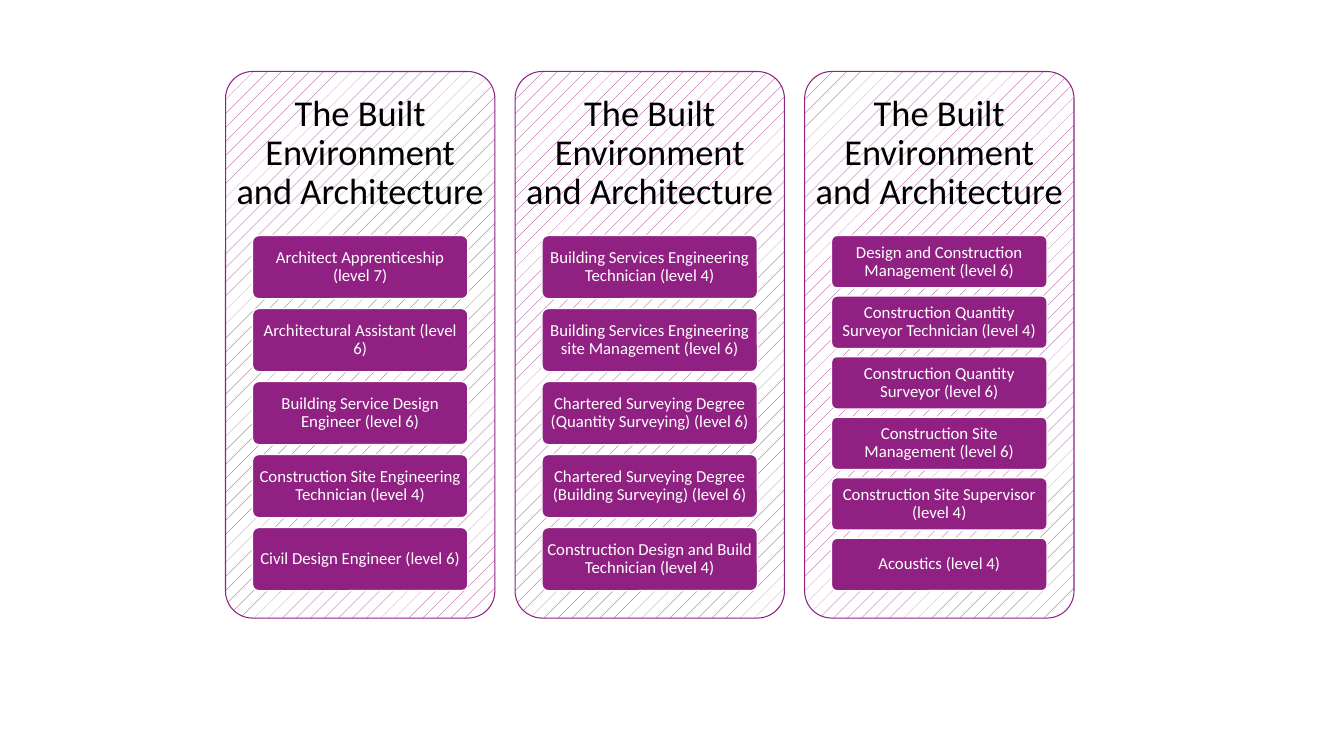
"""Builds a slide with three panels of built environment apprenticeships."""
from pptx import Presentation
from pptx.dml.color import RGBColor
from pptx.enum.dml import MSO_PATTERN
from pptx.enum.shapes import MSO_SHAPE
from pptx.enum.text import MSO_ANCHOR, PP_ALIGN
from pptx.util import Pt

ROUNDED = MSO_SHAPE.ROUNDED_RECTANGLE
DOTTED = MSO_PATTERN.PERCENT_5
MIDDLE = MSO_ANCHOR.MIDDLE
CENTER = PP_ALIGN.CENTER

COLORS = {"purple": "902182", "white": "FFFFFF", "black": "000000"}
HEADING = "The Built Environment and Architecture"
PANELS = [
    [
        "Architect Apprenticeship (level 7)",
        "Architectural Assistant (level 6)",
        "Building Service Design Engineer (level 6)",
        "Construction Site Engineering Technician (level 4)",
        "Civil Design Engineer (level 6)",
    ],
    [
        "Building Services Engineering Technician (level 4)",
        "Building Services Engineering site Management (level 6)",
        "Chartered Surveying Degree (Quantity Surveying) (level 6)",
        "Chartered Surveying Degree (Building Surveying) (level 6)",
        "Construction Design and Build Technician (level 4)",
    ],
    [
        "Design and Construction Management (level 6)",
        "Construction Quantity Surveyor Technician (level 4)",
        "Construction Quantity Surveyor (level 6)",
        "Construction Site Management (level 6)",
        "Construction Site Supervisor (level 4)",
        "Acoustics (level 4)",
    ],
]

PANEL_LEFT, PANEL_TOP = 161.1, 51.1
PANEL_WIDTH, PANEL_HEIGHT = 192.4, 390.4
PANEL_STEP = PANEL_WIDTH * 1.075
HEADING_HEIGHT = PANEL_HEIGHT * 0.3
COURSES_HEIGHT = PANEL_HEIGHT * 0.65
GAP_RATIO = 0.154


def color(name):
    return RGBColor.from_string(COLORS[name])


def write(box, text, *, size, ink, inset_x, inset_y):
    frame = box.text_frame
    frame.word_wrap = True
    frame.vertical_anchor = MIDDLE
    frame.margin_left = frame.margin_right = Pt(inset_x)
    frame.margin_top = frame.margin_bottom = Pt(inset_y)
    para = frame.paragraphs[0]
    para.alignment = CENTER
    para.line_spacing = 0.9
    span = para.add_run()
    span.text = text
    span.font.name = "Calibri"
    span.font.size = Pt(size)
    span.font.color.rgb = color(ink)


deck = Presentation()
deck.slide_width, deck.slide_height = Pt(960), Pt(540)
page = deck.slides.add_slide(deck.slide_layouts[6])

for column, courses in enumerate(PANELS):
    left = PANEL_LEFT + column * PANEL_STEP
    panel = page.shapes.add_shape(
        ROUNDED, Pt(left), Pt(PANEL_TOP), Pt(PANEL_WIDTH), Pt(PANEL_HEIGHT))
    panel.adjustments[0] = 0.1
    panel.shadow.inherit = False
    panel.fill.patterned()
    panel.fill.pattern = DOTTED
    panel.fill.fore_color.rgb = color("purple")
    panel.fill.back_color.rgb = color("white")
    panel.line.color.rgb = color("purple")
    panel.line.width = Pt(0.75)

    heading = page.shapes.add_textbox(
        Pt(left), Pt(PANEL_TOP), Pt(PANEL_WIDTH), Pt(HEADING_HEIGHT))
    write(heading, HEADING, size=26, ink="black", inset_x=7.8, inset_y=7.8)

    count = len(courses)
    height = COURSES_HEIGHT / (count + (count - 1) * GAP_RATIO)
    for row, course in enumerate(courses):
        top = PANEL_TOP + HEADING_HEIGHT + row * height * (1 + GAP_RATIO)
        card = page.shapes.add_shape(
            ROUNDED, Pt(left + PANEL_WIDTH * 0.1), Pt(top),
            Pt(PANEL_WIDTH * 0.8), Pt(height))
        card.adjustments[0] = 0.1
        card.shadow.inherit = False
        card.fill.solid()
        card.fill.fore_color.rgb = color("purple")
        card.line.color.rgb = color("white")
        card.line.width = Pt(1)
        write(card, course, size=12, ink="white", inset_x=2.4, inset_y=1.8)

deck.save("out.pptx")
